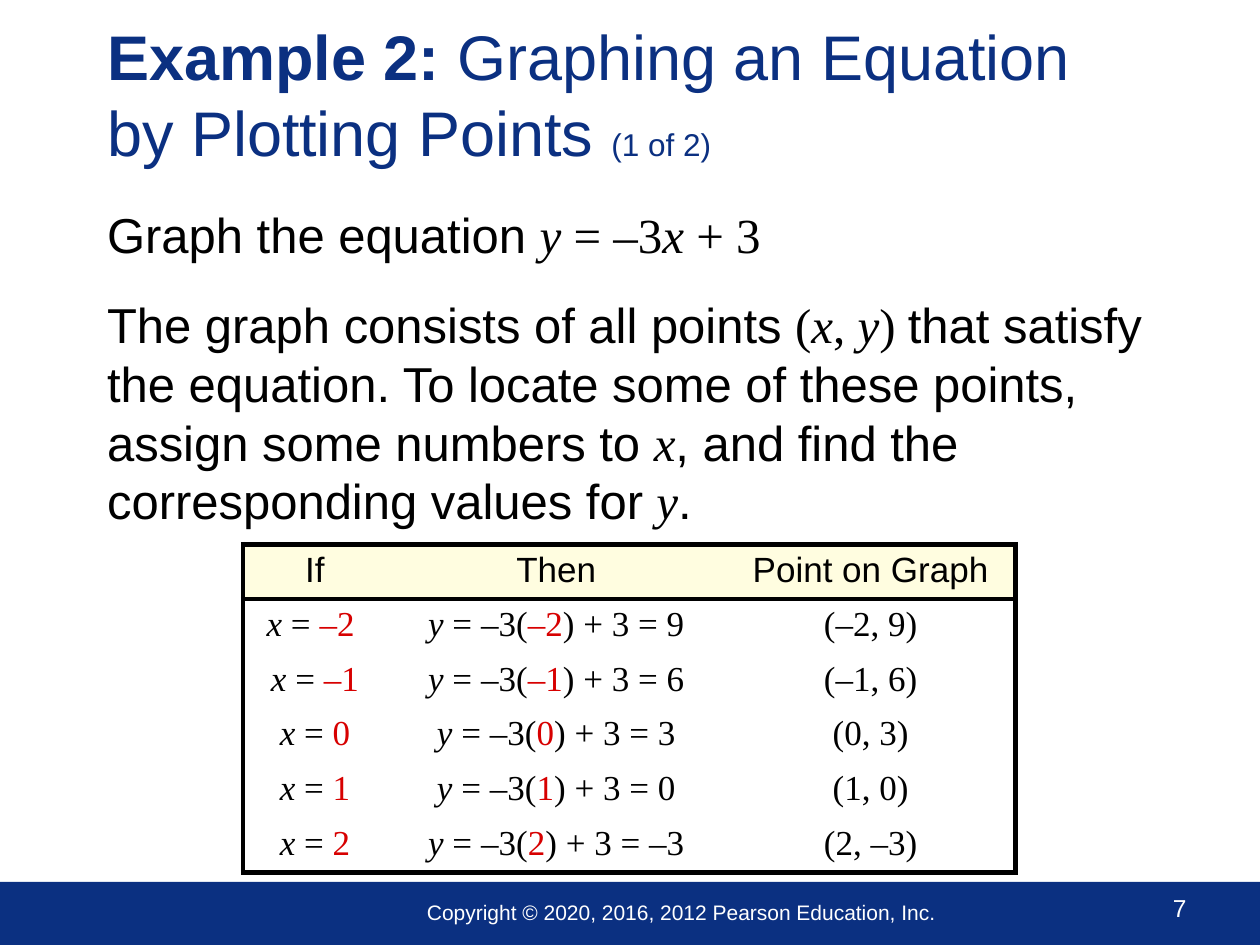
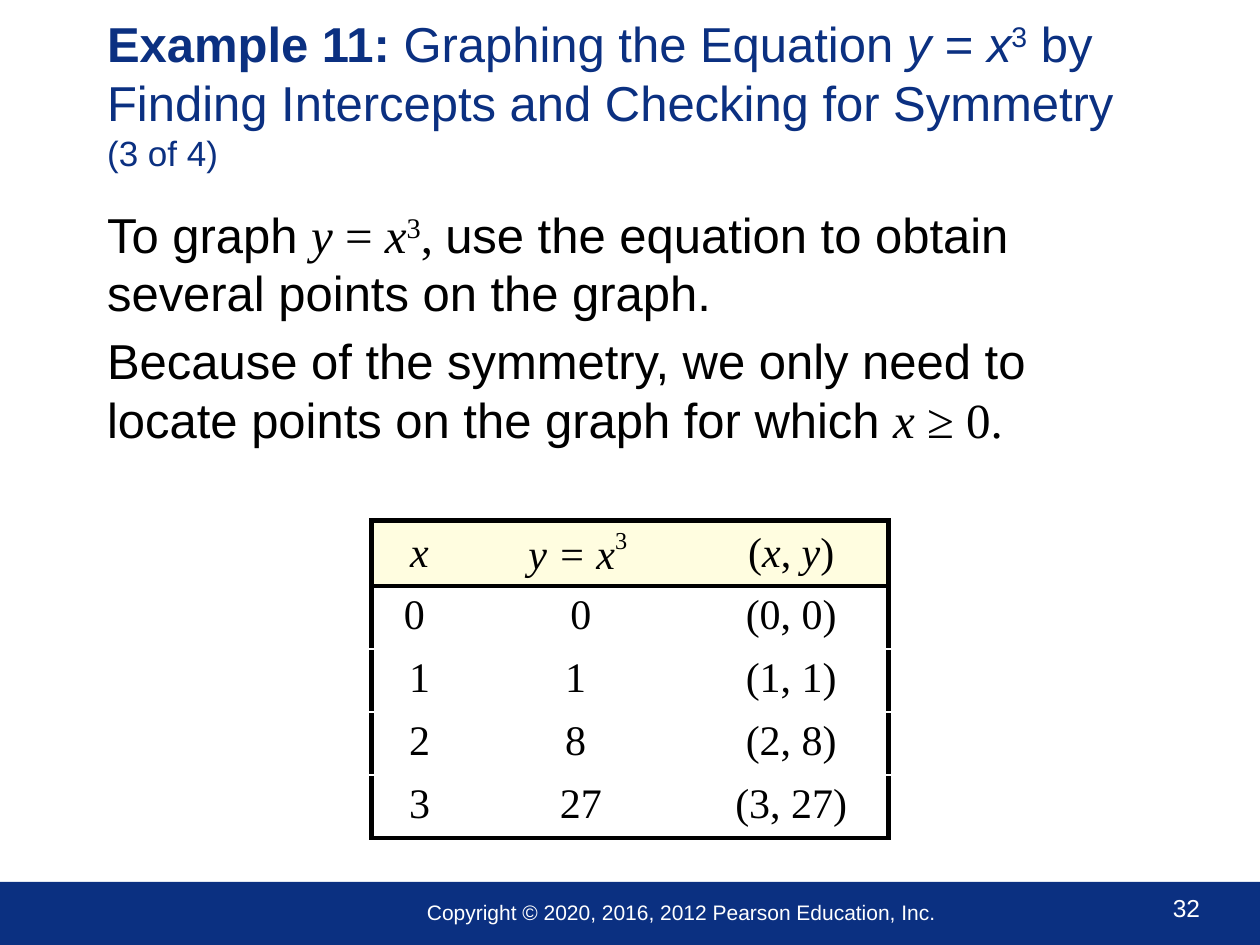
from dataclasses import dataclass, replace
from itertools import groupby
from typing import NamedTuple, Optional

from lxml.etree import SubElement
from pptx import Presentation
from pptx.dml.color import RGBColor
from pptx.enum.shapes import MSO_SHAPE as Preset
from pptx.enum.text import MSO_ANCHOR as Anchor, MSO_AUTO_SIZE as AutoSize, PP_ALIGN as Align
from pptx.oxml.ns import qn
from pptx.util import Emu, Inches, Pt

NAVY = RGBColor(0x0B, 0x30, 0x81)
CREAM = RGBColor(0xFF, 0xFD, 0xE0)
RED = RGBColor(0xD7, 0x00, 0x00)
BLACK = RGBColor(0x00, 0x00, 0x00)
WHITE = RGBColor(0xFF, 0xFF, 0xFF)

SANS = "Arial"
SERIF = "Times New Roman"
BODY_SIZE = 28
COPYRIGHT = "Copyright © 2020, 2016, 2012 Pearson Education, Inc."

SLIDE_WIDTH, SLIDE_HEIGHT = Inches(10), Inches(7.5)
COLUMN = SLIDE_WIDTH // 40
ROW = SLIDE_HEIGHT // 30


class Area(NamedTuple):
    """A place on the slide, in grid columns and rows."""
    left: float
    top: float
    width: float
    height: float

    def lengths(self) -> list[Emu]:
        units = (COLUMN, ROW, COLUMN, ROW)
        return [Emu(round(value * unit)) for value, unit in zip(self, units)]


TITLE = Area(3, 0.68, 34, 4.56)
BODY = Area(3, 6.28, 34, 20.88)
BAND = Area(0, 28, 40, 2)
PAGE_NUMBER = Area(36.84, 28.16, 2.96, 1.36)
COPYRIGHT_LINE = Area(13.16, 28.36, 17.36, 1.2)


@dataclass(frozen=True)
class Span:
    text: str
    size: Optional[float] = None
    font: str = SANS
    color: Optional[RGBColor] = None
    bold: bool = False
    italic: bool = False
    raised: int = 0  # percent above the baseline


@dataclass(frozen=True)
class Paragraph:
    spans: list[Span]
    space_before: float = 0


class Edge(NamedTuple):
    color: RGBColor
    points: float


FRAME = Edge(BLACK, 3)
HAIRLINE = Edge(WHITE, 1)


@dataclass(frozen=True)
class ValueTable:
    left: float
    top: float
    columns: list[float]
    row_height: float
    size: float
    rows: list[list[list[Span]]]
    header_anchor: Anchor = Anchor.TOP
    divider: Optional[Edge] = None


@dataclass(frozen=True)
class Lesson:
    number: int
    title: list[Span]
    title_size: float
    body: list[Paragraph]
    table: ValueTable


def math(text: str, font: str = SERIF) -> list[Span]:
    """Split a formula into spans, with the variables x and y in italics."""
    return [Span("".join(letters), font=font, italic=variable)
            for variable, letters in groupby(text, lambda letter: letter in "xy")]


def cube(font: str = SERIF) -> Span:
    return Span("3", font=font, raised=30)


def red(text: str) -> Span:
    return Span(text, font=SERIF, color=RED)


def add_spans(para, spans: list[Span], size: float, color: RGBColor) -> None:
    for span in spans:
        run = para.add_run()
        run.text = span.text
        font = run.font
        font.size = Pt(span.size or size)
        font.name = span.font
        font.bold, font.italic = span.bold, span.italic
        font.color.rgb = span.color or color
        if span.raised:
            font._element.set("baseline", str(span.raised * 1000))


def place(shape, area: Area) -> None:
    shape.left, shape.top, shape.width, shape.height = area.lengths()


def fill_title(page, lesson: Lesson) -> None:
    title = page.shapes.title
    place(title, TITLE)
    frame = title.text_frame
    frame.auto_size = AutoSize.NONE
    frame.vertical_anchor = Anchor.MIDDLE
    para = frame.paragraphs[0]
    para.alignment = Align.LEFT
    add_spans(para, lesson.title, lesson.title_size, NAVY)


def fill_body(page, paragraphs: list[Paragraph]) -> None:
    body = page.placeholders[1]
    place(body, BODY)
    frame = body.text_frame
    frame.auto_size = AutoSize.NONE
    for index, paragraph in enumerate(paragraphs):
        para = frame.add_paragraph() if index else frame.paragraphs[0]
        properties = para._p.get_or_add_pPr()
        properties.set("marL", "0")
        properties.set("indent", "0")
        SubElement(properties, qn("a:buNone"))
        para.space_before = Pt(paragraph.space_before)
        add_spans(para, paragraph.spans, BODY_SIZE, BLACK)


def add_footer(page, number: int) -> None:
    band = page.shapes.add_shape(Preset.RECTANGLE, *BAND.lengths())
    band.shadow.inherit = False
    band.fill.solid()
    band.fill.fore_color.rgb = NAVY
    band.line.fill.background()
    for area, text, size in ((PAGE_NUMBER, str(number), 14), (COPYRIGHT_LINE, COPYRIGHT, 12)):
        frame = page.shapes.add_textbox(*area.lengths()).text_frame
        frame.word_wrap = True
        add_spans(frame.paragraphs[0], [Span(text)], size, WHITE)


def set_border(cell, side: str, edge: Optional[Edge]) -> None:
    line = SubElement(cell._tc.get_or_add_tcPr(), qn(f"a:ln{side}"))
    if edge is None:
        line.set("w", "0")
        SubElement(line, qn("a:noFill"))
        return
    line.set("w", str(Pt(edge.points)))
    fill = SubElement(line, qn("a:solidFill"))
    SubElement(fill, qn("a:srgbClr")).set("val", str(edge.color))


def add_value_table(page, values: ValueTable) -> None:
    row_count, column_count = len(values.rows), len(values.columns)
    area = Area(values.left, values.top, sum(values.columns), row_count * values.row_height)
    table = page.shapes.add_table(row_count, column_count, *area.lengths()).table
    table.first_row = table.horz_banding = False
    for column, width in zip(table.columns, values.columns):
        column.width = Emu(round(width * COLUMN))
    # Framed above and below the header and at the foot; dividers between.
    levels = [FRAME, FRAME] + [values.divider] * (row_count - 2) + [FRAME]
    for r, row in enumerate(values.rows):
        for c, spans in enumerate(row):
            cell = table.cell(r, c)
            set_border(cell, "L", FRAME if c == 0 else None)
            set_border(cell, "R", FRAME if c == column_count - 1 else None)
            set_border(cell, "T", levels[r])
            set_border(cell, "B", levels[r + 1])
            if r == 0:
                cell.fill.solid()
                cell.fill.fore_color.rgb = CREAM
                cell.vertical_anchor = values.header_anchor
            else:
                cell.fill.background()
            para = cell.text_frame.paragraphs[0]
            para.alignment = Align.CENTER
            add_spans(para, spans, values.size, BLACK)


def line_point(x: str, y: str, gap: str = "") -> list[list[Span]]:
    """One table row for y = –3x + 3."""
    return [
        [*math("x = "), red(x + gap)],
        [*math("y = –3("), red(x), *math(f") + 3 = {y}")],
        math(f"({x}, {y})"),
    ]


LINE_TABLE = ValueTable(
    left=7.72, top=17.28, columns=[4.56, 10.76, 9.2], row_height=1.73, size=20,
    rows=[
        [[Span(heading)] for heading in ("If", "Then", "Point on Graph")],
        line_point("–2", "9", gap=" "),
        *(line_point(x, y) for x, y in (("–1", "6"), ("0", "3"), ("1", "0"), ("2", "–3"))),
    ],
)

CUBE_TABLE = ValueTable(
    left=11.8, top=16.52, columns=[3.04, 7.2, 6.16], row_height=2, size=24,
    header_anchor=Anchor.MIDDLE, divider=HAIRLINE,
    rows=[
        [math("x"),
         [Span("y = x", font=SERIF, italic=True), replace(cube(), text="3 ", raised=48)],
         math("(x, y)")],
        *([math(x), math(y), math(f"({x.strip()}, {y.strip()})")]
          for x, y in (("0 ", "0"), ("1", "1 "), ("2", "8 "), ("3", "27"))),
    ],
)

LESSONS = [
    Lesson(
        number=7,
        title=[Span("Example 2: ", bold=True),
               Span("Graphing an Equation by Plotting Points "),
               Span("(1 of 2)", size=18)],
        title_size=36,
        body=[
            Paragraph([Span("Graph the equation "), *math("y = –3x + 3")]),
            Paragraph([Span("The graph consists of all points "), *math("(x, y) "),
                       Span("that satisfy the equation. To locate some of these points, "
                            "assign some numbers to "), *math("x"),
                       Span(", and find the corresponding values for "), *math("y"),
                       Span(".")], space_before=18),
        ],
        table=LINE_TABLE,
    ),
    Lesson(
        number=32,
        title=[Span("Example 11: ", bold=True), Span("Graphing the Equation "),
               *math("y = x", SANS), cube(SANS),
               Span(" by Finding Intercepts and Checking for Symmetry "),
               Span("(3 of 4)", size=20)],
        title_size=28,
        body=[
            Paragraph([Span("To graph "), *math("y = x"), cube(), *math(", "),
                       Span("use the equation to obtain several points on the graph.")]),
            Paragraph([Span("Because of the symmetry, we only need to locate points "
                            "on the graph for which "), *math("x ≥ 0.")], space_before=5),
        ],
        table=CUBE_TABLE,
    ),
]


def main() -> None:
    deck = Presentation()
    deck.slide_width, deck.slide_height = SLIDE_WIDTH, SLIDE_HEIGHT
    for lesson in LESSONS:
        page = deck.slides.add_slide(deck.slide_layouts[1])
        add_footer(page, lesson.number)
        fill_title(page, lesson)
        fill_body(page, lesson.body)
        add_value_table(page, lesson.table)
    deck.save("out.pptx")


if __name__ == "__main__":
    main()
